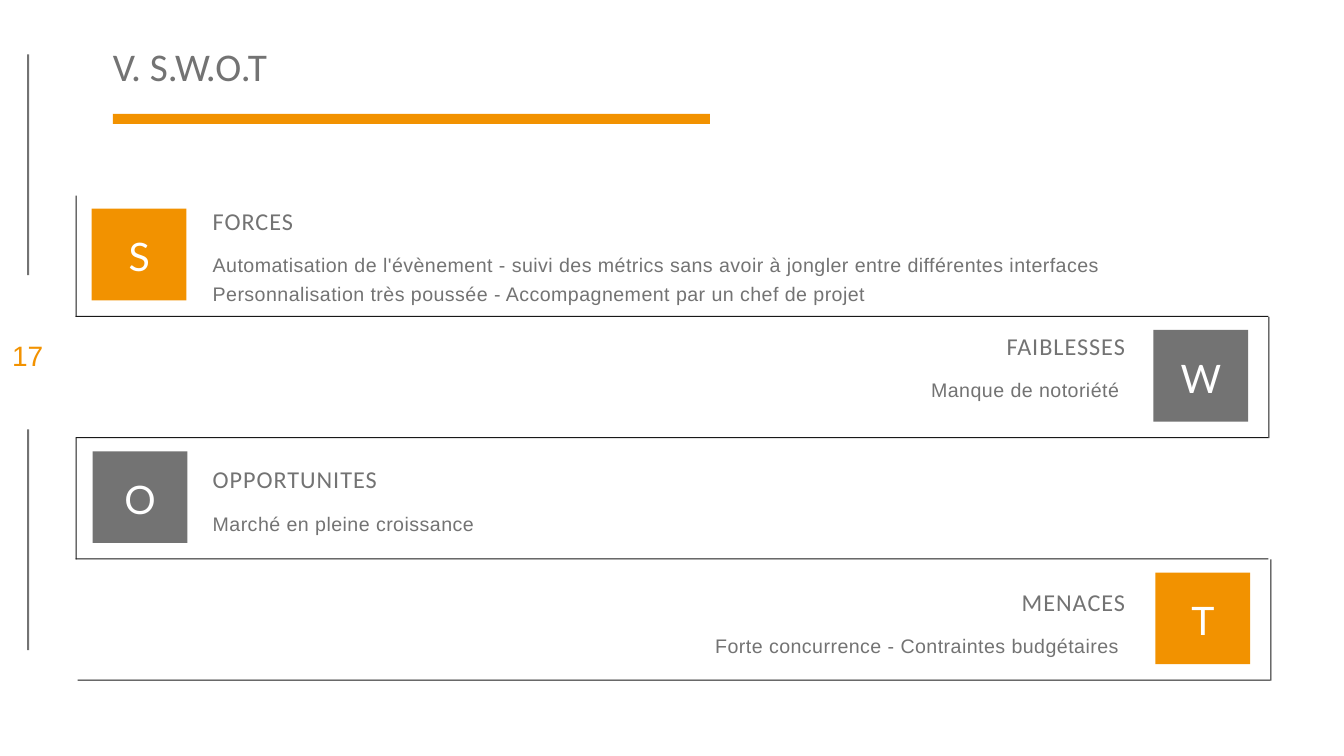
from pptx import Presentation
from pptx.dml.color import RGBColor
from pptx.enum.shapes import MSO_SHAPE as Shape
from pptx.enum.text import MSO_AUTO_SIZE as AutoSize, PP_ALIGN as Align
from pptx.util import Inches, Pt

# Content: letter, heading, lines, side, colour, tile left, row shift, heading offset
ORANGE, GREY, BLACK, WHITE = "F29200", "737373", "191919", "FFFFFF"
TITLE = "V. S.W.O.T"
PAGE_NUMBER = "17"
SWOT = [
    ("S", "FORCES",
     ["Automatisation de l'évènement - suivi des métrics sans avoir à jongler entre différentes interfaces",
      "Personnalisation très poussée - Accompagnement par un chef de projet"],
     "left", ORANGE, 0.91, 0, 0.08),
    ("W", "FAIBLESSES", ["Manque de notoriété "], "right", GREY, 11.44, 0, 0.12),
    ("O", "OPPORTUNITES", ["Marché en pleine croissance"], "left", GREY, 0.92, 0, 0.24),
    ("T", "MENACES", ["Forte concurrence - Contraintes budgétaires "],
     "right", ORANGE, 11.46, 0.02, 0.25),
]

# Text formats: font values, line spacing and letter spacing in points
FORMATS = {
    "title": ({"name": "Calibri", "size": Pt(28)}, 29.1, 0),
    "heading": ({"name": "Calibri", "size": Pt(17.3)}, 22.4, 0.7),
    "body": ({"name": "Arial", "size": Pt(14)}, 21, 0.3),
    "letter": ({"name": "Lato", "size": Pt(28)}, 39.2, 0),
    "number": ({"name": "Arial", "size": Pt(20)}, 28, 0),
}

# Grid of the four rows
ROW_TOP, ROW_PITCH = 1.94, 3.61 / 3
ROW_LEFT, ROW_WIDTH, HAIRLINE = 0.75, 11.83, 0.01
TILE_WIDTH, TILE_HEIGHT, TILE_INSET = 0.94, 0.91, 0.13
TEXT_WIDTH, BODY_DROP = 9.86, 0.43
TEXT_LEFT = {"left": 2.11, "right": 1.3}
TEXT_ALIGN = {"left": Align.LEFT, "right": Align.RIGHT}
BORDER_LEFT = {"left": ROW_LEFT, "right": ROW_LEFT + ROW_WIDTH}


def colour(value):
    return RGBColor.from_string(value)


def add_block(shapes, left, top, width, height, fill):
    shape = shapes.add_shape(Shape.RECTANGLE, *map(Inches, (left, top, width, height)))
    shape.shadow.inherit = False
    shape.fill.solid()
    shape.fill.fore_color.rgb = colour(fill)
    shape.line.fill.background()


def add_text(shapes, left, top, width, height, lines, style, text_colour, align=Align.LEFT):
    font_values, line_spacing, letter_spacing = FORMATS[style]
    frame = shapes.add_textbox(*map(Inches, (left, top, width, height))).text_frame
    frame_values = {"word_wrap": True, "auto_size": AutoSize.SHAPE_TO_FIT_TEXT,
                    "margin_left": 0, "margin_top": 0, "margin_right": 0, "margin_bottom": 0}
    for name, value in frame_values.items():
        setattr(frame, name, value)
    for index, line in enumerate(lines):
        paragraph = frame.add_paragraph() if index else frame.paragraphs[0]
        paragraph.alignment = align
        paragraph.line_spacing = Pt(line_spacing)
        run = paragraph.add_run()
        run.text = line
        for name, value in font_values.items():
            setattr(run.font, name, value)
        run.font.color.rgb = colour(text_colour)
        if letter_spacing:
            run._r.get_or_add_rPr().set("spc", str(round(letter_spacing * 100)))


def add_row(shapes, index, row):
    letter, heading, lines, side, tile_colour, tile_left, shift, heading_offset = row
    top = ROW_TOP + index * ROW_PITCH
    tile_top = top + TILE_INSET

    # Rule below the row, border at its side, tile
    add_block(shapes, ROW_LEFT + shift, top + ROW_PITCH - HAIRLINE, ROW_WIDTH, HAIRLINE, BLACK)
    add_block(shapes, BORDER_LEFT[side] + shift, top, HAIRLINE, ROW_PITCH, BLACK)
    add_block(shapes, tile_left, tile_top, TILE_WIDTH, TILE_HEIGHT, tile_colour)
    add_text(shapes, tile_left + 0.11, tile_top + 0.16, 0.72, 0.55,
             [letter], "letter", WHITE, Align.CENTER)

    # Heading and body
    group = shapes.add_group_shape().shapes
    text_left, align = TEXT_LEFT[side], TEXT_ALIGN[side]
    heading_top = top + heading_offset
    add_text(group, text_left, heading_top + BODY_DROP, TEXT_WIDTH, 0.29 * len(lines),
             lines, "body", GREY, align)
    add_text(group, text_left, heading_top, TEXT_WIDTH, 0.31, [heading], "heading", GREY, align)


def main():
    presentation = Presentation()
    presentation.slide_width, presentation.slide_height = Inches(13.33), Inches(7.5)
    shapes = presentation.slides.add_slide(presentation.slide_layouts[6]).shapes

    for index, row in enumerate(SWOT):
        add_row(shapes, index, row)

    # Page number between two bars
    margin = shapes.add_group_shape().shapes
    for bar_top in (0.54, 4.26):
        add_block(margin, 0.27, bar_top, 0.02, 2.19, GREY)
    add_text(margin, 0, 3.3, 0.55, 0.39, [PAGE_NUMBER], "number", ORANGE, Align.CENTER)

    # Title with its underline
    header = shapes.add_group_shape().shapes
    add_block(header, 1.12, 1.13, 5.92, 0.1, ORANGE)
    add_text(header, 1.12, 0.48, 5.92, 0.41, [TITLE], "title", GREY)

    presentation.save("out.pptx")


if __name__ == "__main__":
    main()
